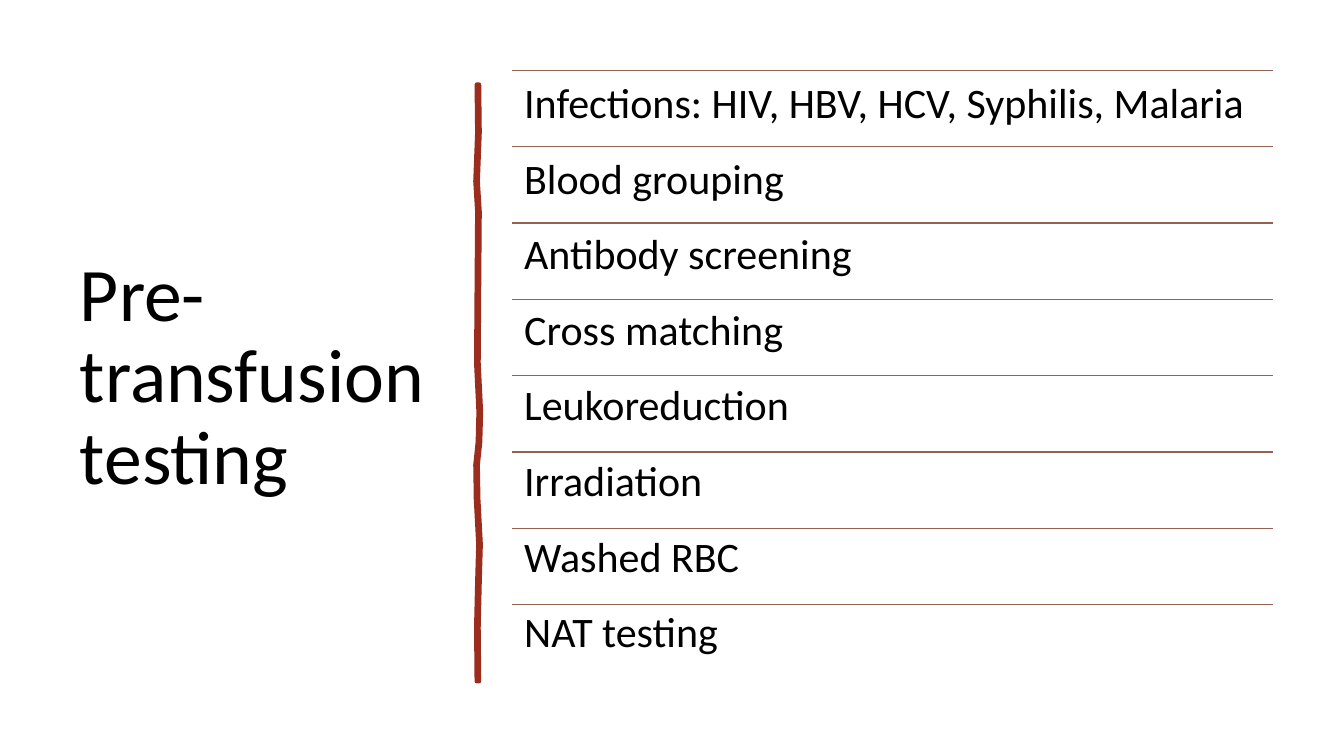
"""Build the pre-transfusion testing slide: title, brushed bar and ruled list."""
from dataclasses import dataclass

from lxml.etree import SubElement as Sub
from pptx import Presentation
from pptx.dml.color import RGBColor as Rgb
from pptx.enum.shapes import MSO_CONNECTOR as Conn
from pptx.enum.text import MSO_ANCHOR as Anchor, MSO_AUTO_SIZE as Fit, PP_ALIGN as Align
from pptx.oxml.ns import qn
from pptx.util import Inches, Pt


@dataclass(frozen=True)
class Theme:
    font: str = "Calibri"
    ink: str = "000000"
    brush: str = "9B2D1F"
    rule: str = "956251"
    head: int = 54
    body: int = 30
    edge: float = 3.25
    thin: float = 1
    lead: float = 0.9


THEME = Theme()
WIDE, HIGH = Inches(13.33), Inches(7.5)
LEFT, SPAN = 38.1, 56.65
TOP, ROW = 9.33, 10.09
TESTS = [
    "Infections: HIV, HBV, HCV, Syphilis, Malaria",
    "Blood grouping",
    "Antibody screening",
    "Cross matching",
    "Leukoreduction",
    "Irradiation",
    "Washed RBC",
    "NAT testing",
]
WAVE = [(11.2, 0), (17.5, 0.04), (24, -0.1), (28, 0.04), (38, 0), (48, -0.04),
        (54.5, 0.14), (58.5, 0.08), (61.5, -0.1), (66, -0.06), (72, 0.12),
        (77, 0.04), (83, -0.04), (90.1, 0)]


def across(share):
    return int(WIDE * share / 100)


def down(share):
    return int(HIGH * share / 100)


def place(shape, left, top, width, height):
    shape.left, shape.top = across(left), down(top)
    shape.width, shape.height = across(width), down(height)


def style(para, size):
    para.alignment = Align.LEFT
    para.line_spacing = THEME.lead
    para.space_before = Pt(0)
    for run in para.runs:
        run.font.name = THEME.font
        run.font.size = Pt(size)
        run.font.color.rgb = Rgb.from_string(THEME.ink)


def add_title(slide, text):
    title = slide.shapes.title
    place(title, 5.2, TOP, 28.05, 81.47)
    frame = title.text_frame
    frame.text = text
    frame.word_wrap = True
    frame.auto_size = Fit.NONE
    frame.vertical_anchor = Anchor.MIDDLE
    style(frame.paragraphs[0], THEME.head)


def add_bar(slide, mid, half):
    right = [(across(mid + shift + half), down(y)) for y, shift in WAVE]
    left = [(across(mid + shift - half), down(y)) for y, shift in WAVE]
    points = right + left[::-1]
    draw = slide.shapes.build_freeform(*points[0])
    draw.add_line_segments(points[1:], close=True)
    bar = draw.convert_to_shape()
    bar.shadow.inherit = False
    bar.fill.solid()
    bar.fill.fore_color.rgb = Rgb.from_string(THEME.brush)
    bar.line.color.rgb = Rgb.from_string(THEME.brush)
    bar.line.width = Pt(THEME.edge)
    Sub(bar.line._get_or_add_ln(), qn("a:round"))


def add_rule(slide, share):
    y = down(share)
    rule = slide.shapes.add_connector(
        Conn.STRAIGHT, across(LEFT), y, across(LEFT + SPAN), y)
    rule.line.color.rgb = Rgb.from_string(THEME.rule)
    rule.line.width = Pt(THEME.thin)
    Sub(rule._element.spPr, qn("a:effectLst"))


def add_list(slide, items):
    body = slide.placeholders[1]
    place(body, LEFT, TOP, SPAN, ROW * len(items))
    frame = body.text_frame
    frame.text = "\n".join(items)
    frame.word_wrap = True
    frame.auto_size = Fit.NONE
    frame.vertical_anchor = Anchor.TOP
    frame.margin_left = frame.margin_right = Inches(0.12)
    frame.margin_top = frame.margin_bottom = Inches(0.12)
    line = Pt(THEME.body * THEME.lead * 1.22)
    for index, para in enumerate(frame.paragraphs):
        style(para, THEME.body)
        para.space_after = down(ROW) - line
        props = para._p.get_or_add_pPr()
        props.set("marL", "0")
        props.set("indent", "0")
        Sub(props, qn("a:buNone"))
        add_rule(slide, TOP + index * ROW)


def main():
    deck = Presentation()
    deck.slide_width, deck.slide_height = WIDE, HIGH
    slide = deck.slides.add_slide(deck.slide_layouts[1])
    add_title(slide, "Pre-transfusion testing")
    add_bar(slide, 35.56, 0.08)
    add_list(slide, TESTS)
    deck.save("out.pptx")


if __name__ == "__main__":
    main()
